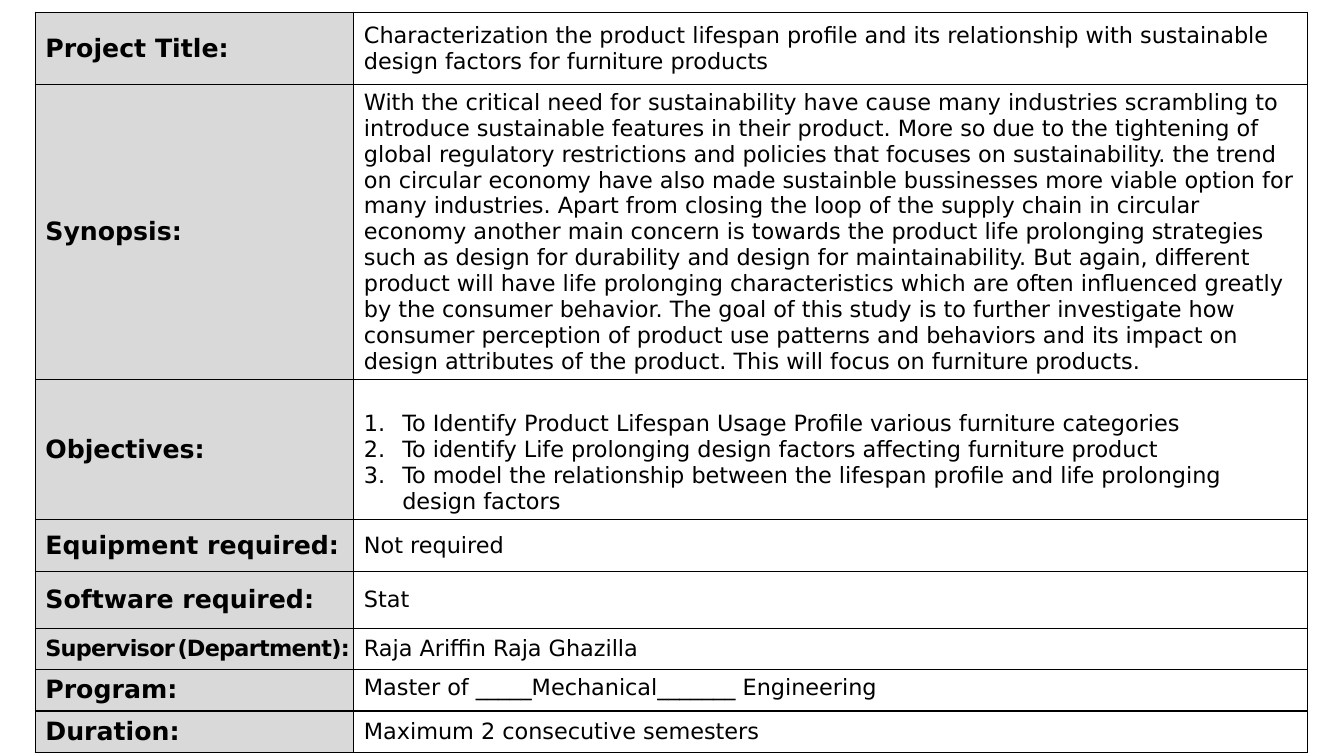
from dataclasses import dataclass

from lxml.etree import SubElement
from pptx import Presentation
from pptx.dml.color import RGBColor
from pptx.enum.text import MSO_ANCHOR as Anchor
from pptx.oxml import parse_xml
from pptx.oxml.ns import nsdecls, qn
from pptx.util import Inches, Pt


@dataclass(frozen=True)
class Theme:
    font: str = "DejaVu Sans"
    ink: str = "000000"
    label_fill: str = "D9D9D9"
    label_size: int = 18
    body_size: int = 16
    gap_size: int = 5
    border: float = 1


THEME = Theme()

SYNOPSIS_SENTENCES = [
    "With the critical need for sustainability have cause many industries scrambling to "
    "introduce sustainable features in their product.",
    "More so due to the tightening of global regulatory restrictions and policies that "
    "focuses on sustainability.",
    "the trend on circular economy have also made sustainble bussinesses more viable "
    "option for many industries.",
    "Apart from closing the loop of the supply chain in circular economy another main "
    "concern is towards the product life prolonging strategies such as design for "
    "durability and design for maintainability.",
    "But again, different product will have life prolonging characteristics which are "
    "often influenced greatly by the consumer behavior.",
    "The goal of this study is to further investigate how consumer perception of product "
    "use patterns and behaviors and its impact on design attributes of the product.",
    "This will focus on furniture products.",
]
OBJECTIVES = [
    "To Identify Product Lifespan Usage Profile various furniture categories",
    "To identify Life prolonging design factors affecting furniture product",
    "To model the relationship between the lifespan profile and life prolonging design factors",
]
SUPERVISOR, OBJECTIVE, PROGRAM = "Supervisor (Department):", "Objectives:", "Program:"

# label, body paragraphs, row height in inches
ROWS = [
    ("Project Title:", ["Characterization the product lifespan profile and its relationship "
                        "with sustainable design factors for furniture products"], 0.72),
    ("Synopsis:", [" ".join(SYNOPSIS_SENTENCES)], 2.92),
    (OBJECTIVE, OBJECTIVES, 1.39),
    ("Equipment required:", ["Not required"], 0.52),
    ("Software required:", ["Stat"], 0.56),
    (SUPERVISOR, ["Raja Ariffin Raja Ghazilla"], 0.41),
    (PROGRAM, ["Master of _____Mechanical_______ Engineering"], 0.41),
    ("Duration:", ["Maximum 2 consecutive semesters"], 0.41),
]
COLUMNS = (3.16, 9.46)


def style_font(font, size, bold=False):
    font.name = THEME.font
    font.size = Pt(size)
    font.bold = bold
    font.color.rgb = RGBColor.from_string(THEME.ink)


def draw_borders(cell):
    properties = cell._tc.get_or_add_tcPr()
    for index, side in enumerate(("lnL", "lnR", "lnT", "lnB")):
        properties.insert(index, parse_xml(
            f'<a:{side} {nsdecls("a")} w="{Pt(THEME.border)}"><a:solidFill>'
            f'<a:srgbClr val="{THEME.ink}"/></a:solidFill></a:{side}>'))


def number_paragraph(para, indent):
    properties = para._p.get_or_add_pPr()
    properties.set("marL", str(indent))
    properties.set("indent", str(-indent))
    bullet = SubElement(properties, qn("a:buAutoNum"), type="arabicPeriod")
    properties.insert(0, bullet)


def write_supervisor(cell):
    """Fit the long label on one line with tight letters and a narrow gap."""
    cell.margin_right = 0
    para = cell.text_frame.paragraphs[0]
    name, department = SUPERVISOR.split()
    for text, size in ((name, THEME.body_size), (" ", THEME.gap_size),
                       (department, THEME.body_size)):
        span = para.add_run()
        span.text = text
        style_font(span.font, size, bold=True)
        span.font._element.set("spc", "-50")


def fill_label(cell, label):
    cell.fill.solid()
    cell.fill.fore_color.rgb = RGBColor.from_string(THEME.label_fill)
    if label == SUPERVISOR:
        write_supervisor(cell)
    else:
        cell.text = label
        style_font(cell.text_frame.paragraphs[0].font, THEME.label_size, bold=True)


def fill_body(cell, label, lines):
    cell.fill.background()
    cell.text = "\n".join(lines)
    for para in cell.text_frame.paragraphs:
        style_font(para.font, THEME.body_size)
        if label == OBJECTIVE:
            number_paragraph(para, Inches(0.38))
    if label == OBJECTIVE:
        cell.margin_top = Inches(0.31)


def add_project_table(page, left, top):
    height = sum(row[2] for row in ROWS)
    table = page.shapes.add_table(len(ROWS), len(COLUMNS), Inches(left), Inches(top),
                                  Inches(sum(COLUMNS)), Inches(height)).table
    table.first_row = table.horz_banding = False
    for column, width in zip(table.columns, COLUMNS):
        column.width = Inches(width)
    for row, (label, lines, row_height) in zip(table.rows, ROWS):
        row.height = Inches(row_height)
        label_cell, body_cell = row.cells
        fill_label(label_cell, label)
        fill_body(body_cell, label, lines)
        for cell in (label_cell, body_cell):
            cell.vertical_anchor = Anchor.MIDDLE
            draw_borders(cell)
        if label == PROGRAM:
            body_cell.vertical_anchor = Anchor.TOP


def main():
    deck = Presentation()
    deck.slide_width, deck.slide_height = Inches(13.33), Inches(7.5)
    page = deck.slides.add_slide(deck.slide_layouts.get_by_name("Blank"))
    add_project_table(page, 0.35, 0.12)
    deck.save("out.pptx")


if __name__ == "__main__":
    main()
